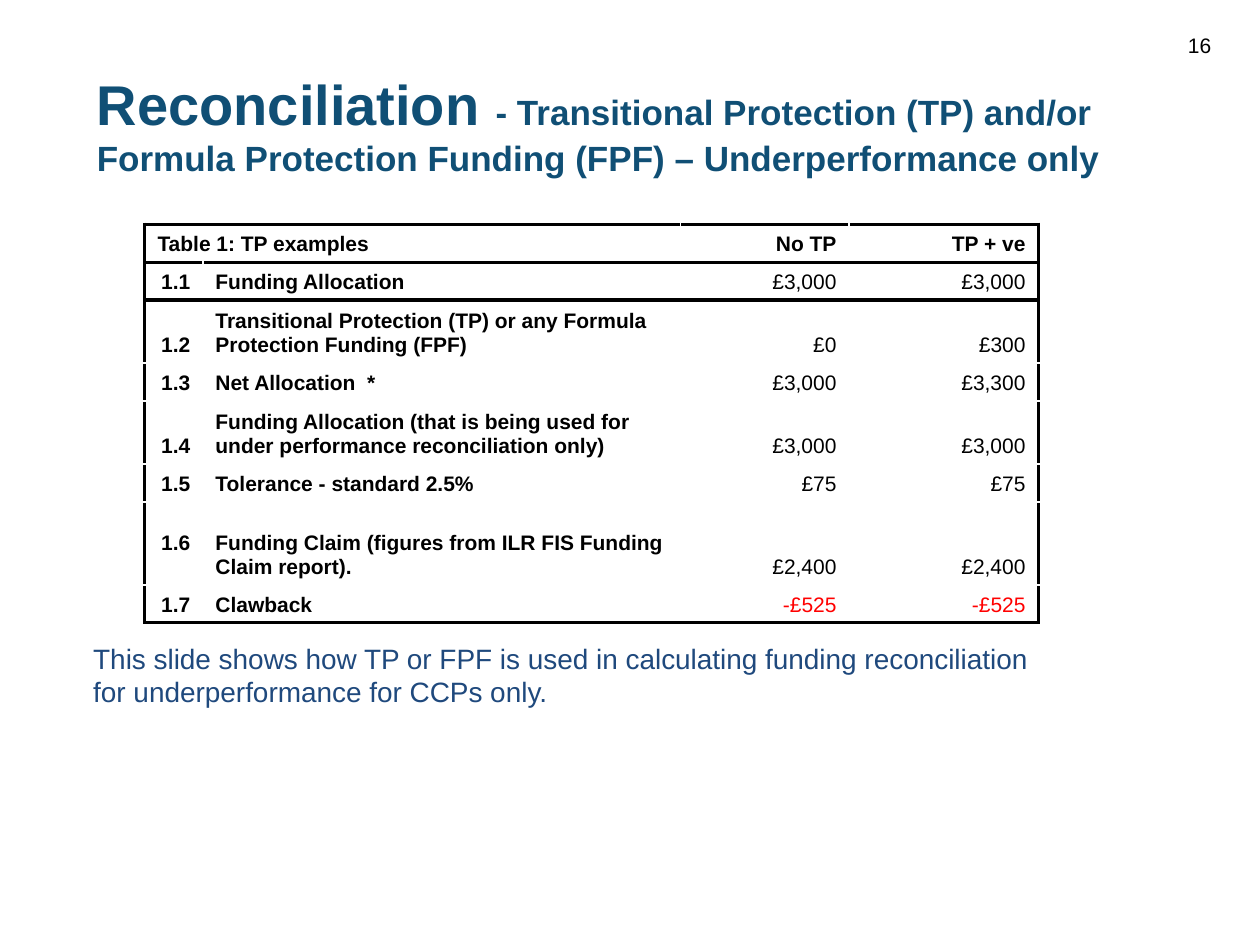
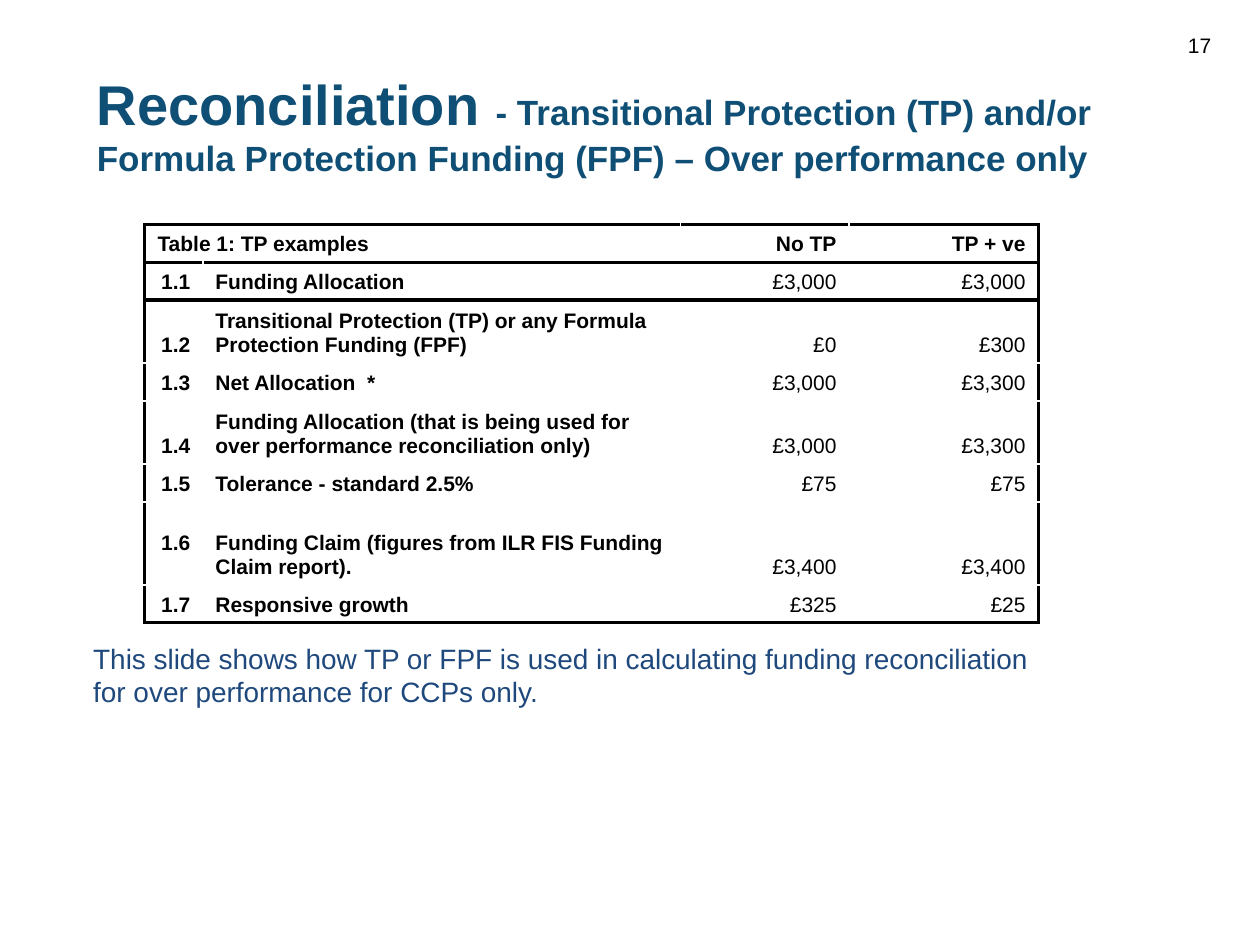
import pptx
import pptx.dml.color
import pptx.enum.text
import pptx.oxml
import pptx.util
from lxml import etree

WIDTH, HEIGHT = pptx.util.Inches(10), pptx.util.Inches(7.5)
COLUMN, ROW = WIDTH / 100, HEIGHT / 75  # grid of 100 columns by 75 rows

FONT = "Arial"
TITLE_BLUE, NOTE_BLUE, BLACK, RED = "104F75", "1F497D", "000000", "FF0000"

# Regions in grid units: left, top, width, height
TITLE_BOX = (6.7, 4.4, 87.4, 10.2)
TABLE_BOX = (11.5, 17.8, 70.9, 31.3)
NOTE_BOX = (7.4, 50.9, 75.6, 7.9)
NUMBER_BOX = (93.3, 2.1, 3.9, 3)

TABLE_COLUMNS = (4.6, 37.9, 13.4, 15)
TABLE_ROWS = (3, 3, 4.7, 3, 5, 3, 6.6, 3)
BORDER_WIDTH = pptx.util.Pt(2)

ALIGN = pptx.enum.text.PP_ALIGN
ANCHOR = pptx.enum.text.MSO_ANCHOR


def color(hex_string):
    return pptx.dml.color.RGBColor.from_string(hex_string)


def place(box):
    left, top, width, height = box
    return [round(length) for length in
            (left * COLUMN, top * ROW, width * COLUMN, height * ROW)]


def style(paragraph, size, hex_string, bold=False):
    font = paragraph.font
    font.name, font.bold = FONT, bold
    font.color.rgb = color(hex_string)
    if size:
        font.size = pptx.util.Pt(size)


def add_frame(slide, box):
    frame = slide.shapes.add_textbox(*place(box)).text_frame
    frame.word_wrap = True
    return frame


def add_title(slide, box, subject):
    frame = add_frame(slide, box)
    frame.vertical_anchor = ANCHOR.MIDDLE
    frame.margin_top = pptx.util.Inches(0.12)
    heading = frame.paragraphs[0]
    parts = (("Reconciliation ", 32),
             ("- Transitional Protection (TP) and/or Formula Protection "
              f"Funding (FPF) – {subject} only", 20))
    for words, size in parts:
        run = heading.add_run()
        run.text = words
        run.font.size = pptx.util.Pt(size)
    style(heading, None, TITLE_BLUE, bold=True)


def add_text(slide, box, words, size, hex_string, margin=None):
    frame = add_frame(slide, box)
    if margin is not None:
        frame.margin_left = frame.margin_right = margin
        frame.margin_top = frame.margin_bottom = margin
    frame.paragraphs[0].text = words
    style(frame.paragraphs[0], size, hex_string)


def add_borders(cell, sides):
    properties = cell._tc.get_or_add_tcPr()
    for side in sides:
        line = etree.SubElement(properties, pptx.oxml.ns.qn(f"a:ln{side}"),
                                w=str(BORDER_WIDTH))
        fill = etree.SubElement(line, pptx.oxml.ns.qn("a:solidFill"))
        etree.SubElement(fill, pptx.oxml.ns.qn("a:srgbClr"), val=BLACK)


def add_examples_table(slide, box, rows):
    table = slide.shapes.add_table(
        len(TABLE_ROWS), len(TABLE_COLUMNS), *place(box)).table
    table.first_row = table.horz_banding = False
    for column, width in zip(table.columns, TABLE_COLUMNS):
        column.width = round(width * COLUMN)
    for row, height in zip(table.rows, TABLE_ROWS):
        row.height = round(height * ROW)

    last_row, last_column = len(TABLE_ROWS) - 1, len(TABLE_COLUMNS) - 1
    for r, row in enumerate(rows):
        for c, words in enumerate(row):
            cell = table.cell(r, c)
            # Outer frame and the rule below the header
            edges = {"L": c == 0, "R": c == last_column,
                     "T": r in (0, 1), "B": r in (0, last_row)}
            add_borders(cell, [side for side, drawn in edges.items() if drawn])
            cell.fill.background()
            cell.vertical_anchor = (
                ANCHOR.MIDDLE if words == "1.6" else ANCHOR.BOTTOM)

            paragraph = cell.text_frame.paragraphs[0]
            paragraph.text = words
            is_label = c == 1 or (r, c) == (0, 0)
            paragraph.alignment = ALIGN.LEFT if is_label else ALIGN.RIGHT
            style(paragraph, 12, RED if words.startswith("-") else BLACK,
                  bold=r == 0 or c < 2)
    table.cell(0, 0).merge(table.cell(0, 1))


def example_rows(basis, used_allocation, claim, outcome, results):
    lines = [
        ("Funding Allocation", "£3,000", "£3,000"),
        ("Transitional Protection (TP) or any Formula Protection Funding (FPF)",
         "£0", "£300"),
        ("Net Allocation  *", "£3,000", "£3,300"),
        (f"Funding Allocation (that is being used for {basis} "
         "reconciliation only)", "£3,000", used_allocation),
        ("Tolerance - standard 2.5%", "£75", "£75"),
        ("Funding Claim (figures from ILR FIS Funding Claim report).",
         claim, claim),
        (outcome, *results),
    ]
    header = ("Table 1: TP examples", "", "No TP", "TP + ve")
    return [header] + [(f"1.{n}", *line) for n, line in enumerate(lines, 1)]


def add_reconciliation_slide(deck, number, subject, rows):
    slide = deck.slides.add_slide(deck.slide_layouts[6])
    add_title(slide, TITLE_BOX, subject)
    add_examples_table(slide, TABLE_BOX, rows)
    add_text(slide, NOTE_BOX,
             "This slide shows how TP or FPF is used in calculating funding "
             f"reconciliation for {subject.lower()} for CCPs only.",
             16, NOTE_BLUE, margin=0)
    add_text(slide, NUMBER_BOX, str(number), 12, BLACK)


def main():
    deck = pptx.Presentation()
    deck.slide_width, deck.slide_height = WIDTH, HEIGHT
    add_reconciliation_slide(
        deck, 16, "Underperformance",
        example_rows("under performance", "£3,000", "£2,400",
                     "Clawback", ("-£525", "-£525")))
    add_reconciliation_slide(
        deck, 17, "Over performance",
        example_rows("over performance", "£3,300", "£3,400",
                     "Responsive growth", ("£325", "£25")))
    deck.save("out.pptx")


if __name__ == "__main__":
    main()
